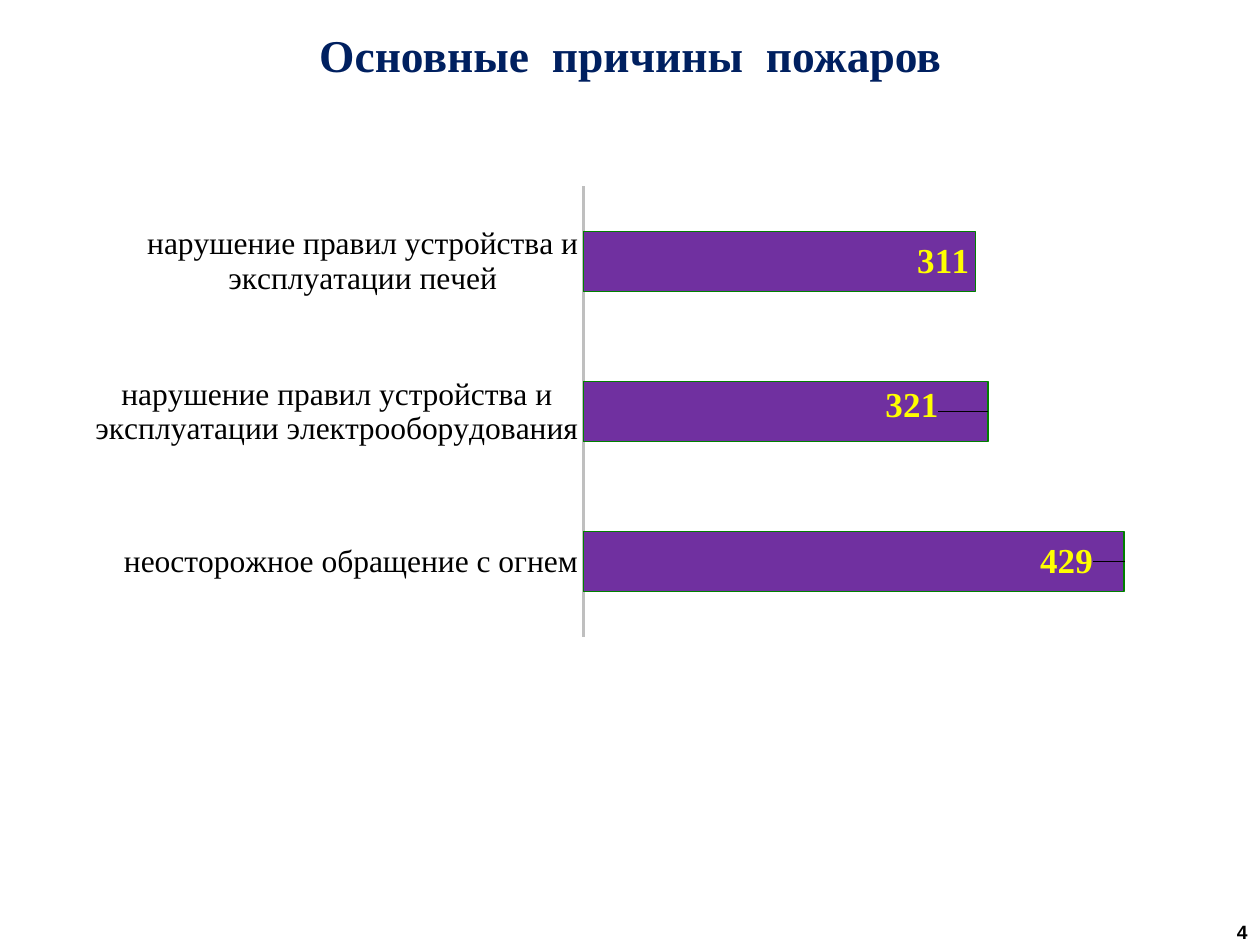
from dataclasses import dataclass
from typing import Any

from lxml import etree
from pptx import Presentation, util as u
from pptx.chart.data import CategoryChartData
from pptx.dml.color import RGBColor
from pptx.enum import chart as ch, text
from pptx.oxml.ns import qn

NAVY = RGBColor(0x00, 0x20, 0x60)
PURPLE = RGBColor(0x70, 0x30, 0xA0)
GREEN = RGBColor(0x00, 0x80, 0x00)
YELLOW = RGBColor(0xFF, 0xFF, 0x00)
GRAY = RGBColor(0xBF, 0xBF, 0xBF)
BLACK = RGBColor(0, 0, 0)
SERIF, SANS = "Times New Roman", "Arial"
WIDTH, HEIGHT = u.Inches(10), u.Inches(7.5)


@dataclass
class Cause:
    """A cause of fires; dx and dy move its label, as shares of the chart."""
    name: str
    fires: int
    dx: float = 0
    dy: float = 0


CAUSES = [
    Cause("неосторожное обращение с огнем", 429, -0.021),
    Cause("нарушение правил устройства и эксплуатации электрооборудования",
          321, -0.036, -0.008),
    Cause("нарушение правил устройства и эксплуатации печей", 311),
]


def box(x: float, y: float, w: float, h: float) -> tuple[int, ...]:
    """Turn shares of the slide into left, top, width and height."""
    return tuple(int(v) for v in (x * WIDTH, y * HEIGHT, w * WIDTH, h * HEIGHT))


def set_font(font: Any, size: float, color: RGBColor, name: str = SERIF,
             bold: bool = False) -> None:
    for key, value in dict(size=u.Pt(size), name=name, bold=bold).items():
        setattr(font, key, value)
    font.color.rgb = color


def write(sp: Any, words: str, align: Any, anchor: Any, **font: Any) -> None:
    tf = sp.text_frame
    tf.word_wrap, tf.vertical_anchor = True, anchor
    p = tf.paragraphs[0]
    p.alignment = align
    r = p.add_run()
    r.text = words
    set_font(r.font, bold=True, **font)


def add_layout(parent: Any, index: int, **values: Any) -> None:
    """Insert a manual layout into a plot area or a data label."""
    layout = etree.Element(qn("c:layout"))
    manual = etree.SubElement(layout, qn("c:manualLayout"))
    for tag, value in values.items():
        etree.SubElement(manual, qn(f"c:{tag}")).set("val", str(value))
    for old in parent.findall(qn("c:layout")):
        parent.remove(old)
    parent.insert(index, layout)


def add_causes_chart(s: Any) -> None:
    data = CategoryChartData()
    data.categories = [c.name for c in CAUSES]
    data.add_series("Series 1", [c.fires for c in CAUSES])
    chart = s.shapes.add_chart(ch.XL_CHART_TYPE.BAR_STACKED,
                               *box(-0.004, 0.11, 0.977, 0.856), data).chart
    chart.has_legend = chart.has_title = False
    set_font(chart.font, 10, BLACK)
    add_layout(chart.plots[0]._element.getparent(), 0, layoutTarget="inner",
               xMode="edge", yMode="edge", x=0.478, y=0.102, w=0.512, h=0.557)

    axis = chart.category_axis
    axis.major_tick_mark = axis.minor_tick_mark = ch.XL_TICK_MARK.NONE
    set_font(axis.tick_labels.font, 18, BLACK)
    axis.format.line.color.rgb = GRAY
    axis.format.line.width = u.Pt(1.5)
    scale = chart.value_axis
    scale.minimum_scale, scale.maximum_scale = 0, 500
    scale.has_major_gridlines = scale.visible = False

    plot = chart.plots[0]
    plot.gap_width, plot.overlap, plot.vary_by_categories = 150, 100, False
    series = plot.series[0]
    series.format.fill.solid()
    series.format.fill.fore_color.rgb = PURPLE
    series.format.line.color.rgb = GREEN
    series.format.line.width = u.Pt(0.75)

    labels = series.data_labels
    labels.show_value = True
    for i, cause in enumerate(CAUSES):
        label = series.points[i].data_label
        set_font(label.font, 20, YELLOW, bold=True)
        label.position = ch.XL_LABEL_POSITION.INSIDE_END
        if cause.dx or cause.dy:
            add_layout(labels._element.findall(qn("c:dLbl"))[i], 1,
                       x=cause.dx, y=cause.dy)
    set_font(labels.font, 20, YELLOW, bold=True)
    labels.position = ch.XL_LABEL_POSITION.INSIDE_END


def main() -> None:
    prs = Presentation()
    prs.slide_width, prs.slide_height = WIDTH, HEIGHT
    s = prs.slides.add_slide(prs.slide_layouts[5])

    title = s.shapes.title
    title.left, title.top, title.width, title.height = box(0.102, 0.021, 0.797, 0.072)
    write(title, "Основные  причины  пожаров", text.PP_ALIGN.CENTER,
          text.MSO_ANCHOR.MIDDLE, size=26, color=NAVY)

    add_causes_chart(s)

    number = s.shapes.add_textbox(*box(0.792, 0.967, 0.208, 0.033))
    write(number, "4", text.PP_ALIGN.RIGHT, text.MSO_ANCHOR.TOP,
          size=11, color=BLACK, name=SANS)
    prs.save("out.pptx")


if __name__ == "__main__":
    main()
